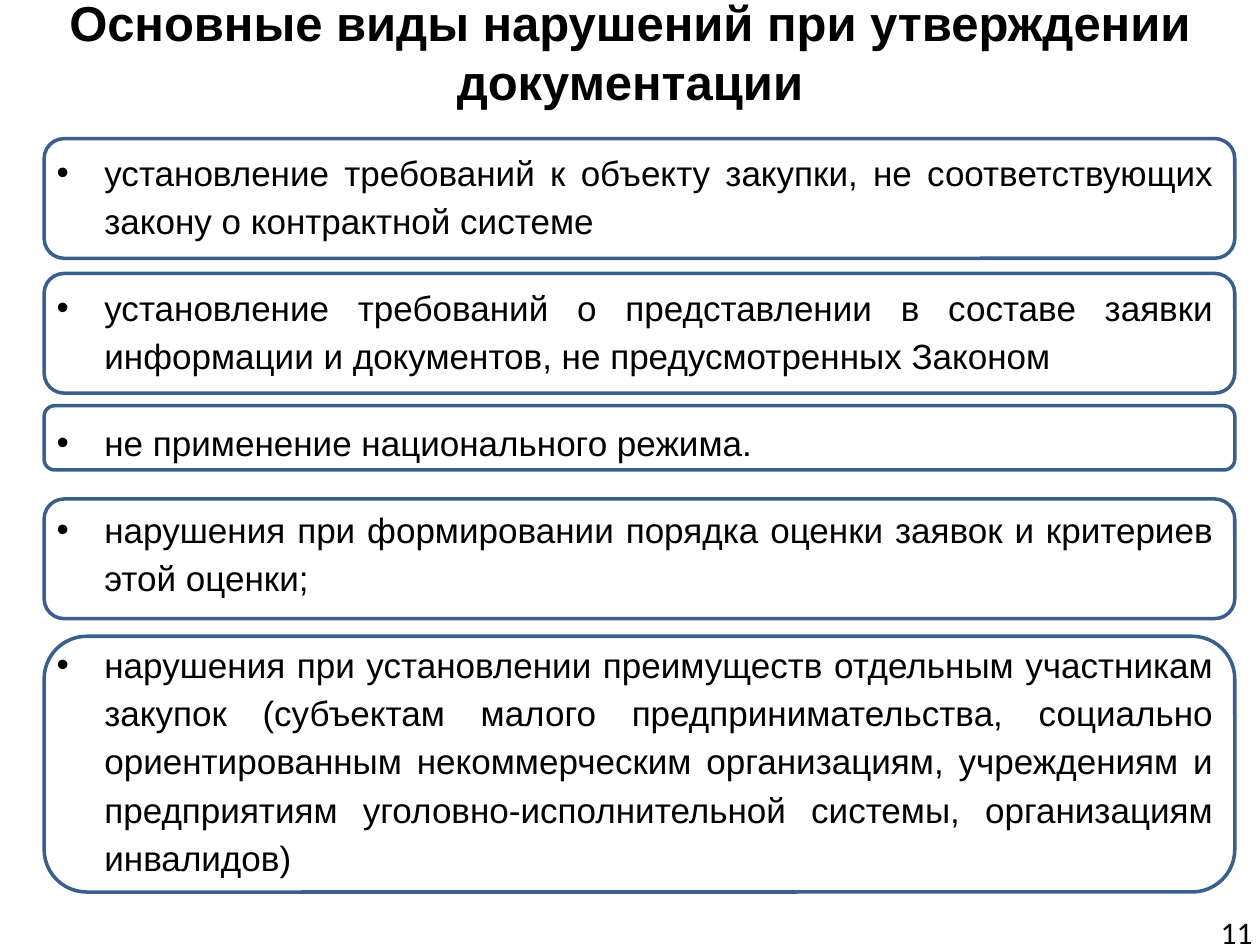
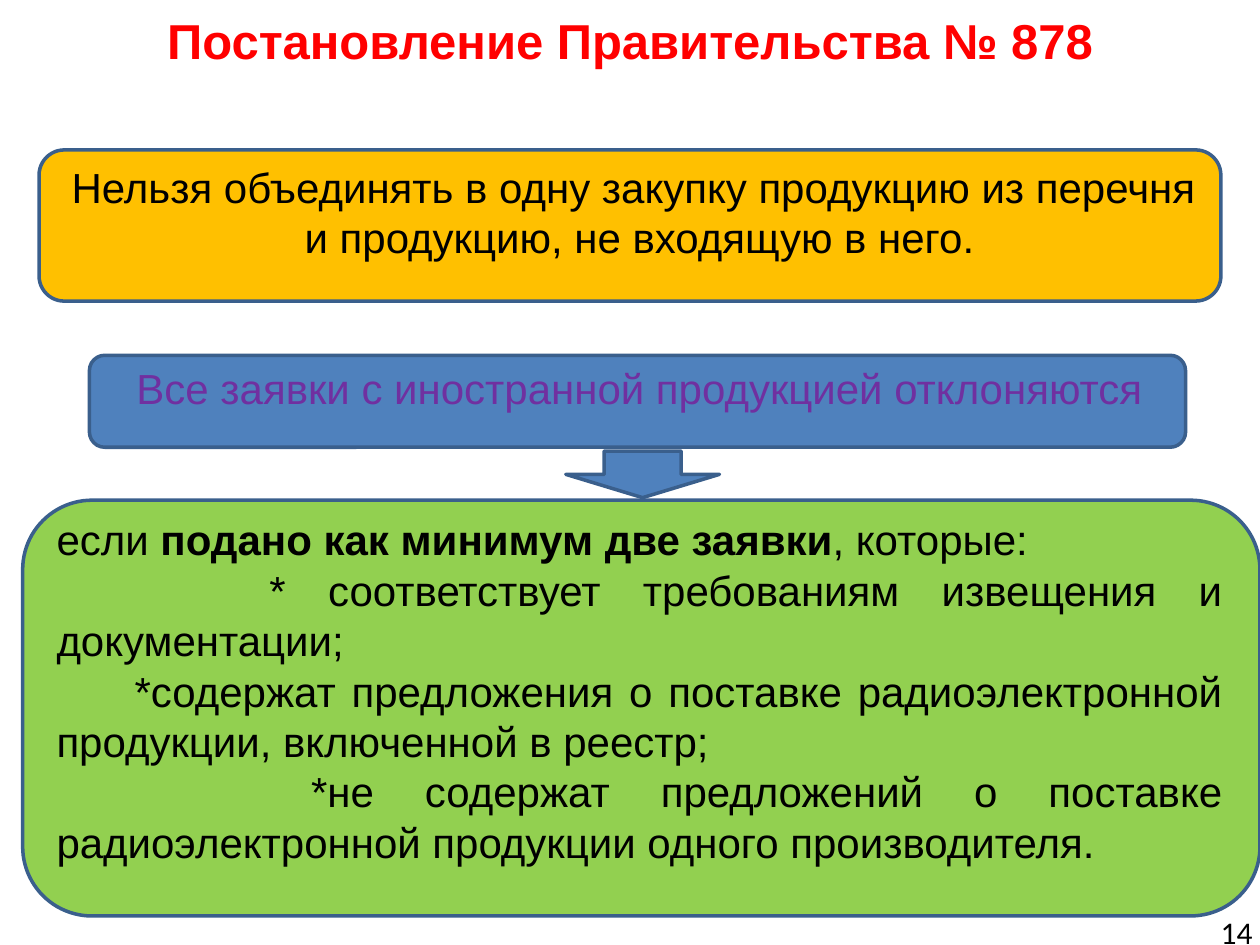
"""Build two slides on procurement documentation violations and Resolution No. 878."""

from dataclasses import dataclass

from lxml.etree import SubElement
from pptx import Presentation
from pptx.dml.color import RGBColor
from pptx.enum.shapes import MSO_SHAPE
from pptx.enum.text import MSO_ANCHOR, MSO_AUTO_SIZE, PP_ALIGN
from pptx.oxml.ns import qn
from pptx.util import Inches, Pt


@dataclass(frozen=True)
class Theme:
    black: str = "000000"
    red: str = "FF0000"
    purple: str = "7030A0"
    outline: str = "3A5F8C"
    amber: str = "FFC000"
    blue: str = "4F81BD"
    green: str = "92D050"
    text_font: str = "Arial"
    number_font: str = "Calibri"
    title_size: int = 28
    list_size: int = 20
    body_size: int = 24
    number_size: int = 18
    line_width: int = 2


def set_attributes(target, values):
    for name, value in values.items():
        setattr(target, name, value)


class SlideBuilder:
    def __init__(self, presentation, theme):
        self.presentation = presentation
        self.theme = theme
        self.slide = None

    def start_slide(self, title, number, title_top, title_color):
        self.slide = self.presentation.slides.add_slide(self.presentation.slide_layouts[5])
        shape = self.slide.shapes.title
        set_attributes(shape, {
            "left": Inches(0), "top": Inches(title_top),
            "width": Inches(10), "height": Inches(0.69),
        })
        self.format_frame(shape.text_frame)
        self.fill_paragraph(shape.text_frame.paragraphs[0], [(title, True)],
                            self.theme.title_size, title_color, PP_ALIGN.CENTER)
        frame = self.text_box(7.71, 7.2, 2.33, 0.33)
        self.fill_paragraph(frame.paragraphs[0], [(number, False)], self.theme.number_size,
                            self.theme.black, PP_ALIGN.RIGHT, self.theme.number_font)

    def format_frame(self, frame):
        set_attributes(frame, {
            "word_wrap": True,
            "auto_size": MSO_AUTO_SIZE.NONE,
            "vertical_anchor": MSO_ANCHOR.TOP,
        })

    def text_box(self, left, top, width, height):
        shape = self.slide.shapes.add_textbox(
            Inches(left), Inches(top), Inches(width), Inches(height))
        self.format_frame(shape.text_frame)
        return shape.text_frame

    def fill_paragraph(self, paragraph, runs, size, color, alignment, font_name=None):
        paragraph.alignment = alignment
        for text, bold in runs:
            run = paragraph.add_run()
            run.text = text
            set_attributes(run.font, {
                "name": font_name or self.theme.text_font,
                "size": Pt(size), "bold": bold,
            })
            run.font.color.rgb = RGBColor.from_string(color)

    def block(self, geometry, left, top, width, height, fill=None):
        shape = self.slide.shapes.add_shape(
            geometry, Inches(left), Inches(top), Inches(width), Inches(height))
        shape.shadow.inherit = False
        if fill:
            shape.fill.solid()
            shape.fill.fore_color.rgb = RGBColor.from_string(fill)
        else:
            shape.fill.background()
        shape.line.color.rgb = RGBColor.from_string(self.theme.outline)
        shape.line.width = Pt(self.theme.line_width)

    def next_paragraph(self, frame, position):
        return frame.add_paragraph() if position else frame.paragraphs[0]

    def bullet_list(self, frame, items, gap):
        for position, item in enumerate(items):
            paragraph = self.next_paragraph(frame, position)
            properties = paragraph._p.get_or_add_pPr()
            properties.set("marL", str(Inches(0.38)))
            properties.set("indent", str(Inches(-0.38)))
            SubElement(properties, qn("a:buFont")).set("typeface", self.theme.text_font)
            SubElement(properties, qn("a:buChar")).set("char", "•")
            set_attributes(paragraph, {
                "line_spacing": 1.15,
                "space_before": Pt(gap if position else 0),
            })
            self.fill_paragraph(paragraph, [(item, False)], self.theme.list_size,
                                self.theme.black, PP_ALIGN.JUSTIFY)

    def text_flow(self, frame, lines):
        for position, (runs, color, alignment, gap, indent) in enumerate(lines):
            paragraph = self.next_paragraph(frame, position)
            paragraph._p.get_or_add_pPr().set("indent", str(Inches(indent)))
            paragraph.space_before = Pt(gap)
            self.fill_paragraph(paragraph, runs, self.theme.body_size, color, alignment)


def build_violations(builder):
    builder.start_slide("Основные виды нарушений при утверждении документации",
                        "11", -0.11, builder.theme.black)
    violations = [
        "установление требований к объекту закупки, не соответствующих закону о контрактной системе",
        "установление требований о представлении в составе заявки информации и документов, "
        "не предусмотренных Законом",
        "не применение национального режима.",
        "нарушения при формировании порядка оценки заявок и критериев этой оценки;",
        "нарушения при установлении преимуществ отдельным участникам закупок (субъектам малого "
        "предпринимательства, социально ориентированным некоммерческим организациям, учреждениям "
        "и предприятиям уголовно-исполнительной системы, организациям инвалидов)",
    ]
    frames = [(1.1, 0.95), (2.17, 0.95), (3.22, 0.51), (3.96, 0.95), (5.05, 2.03)]
    for top, height in frames:
        builder.block(MSO_SHAPE.ROUNDED_RECTANGLE, 0.35, top, 9.45, height)
    builder.bullet_list(builder.text_box(0.35, 1.1, 9.38, 6), violations, 22)


def build_resolution(builder):
    theme = builder.theme
    builder.start_slide("Постановление Правительства № 878", "14", 0.03, theme.red)
    rounded = MSO_SHAPE.ROUNDED_RECTANGLE
    builder.block(rounded, 0.31, 1.19, 9.38, 1.2, theme.amber)
    builder.block(rounded, 0.71, 2.82, 8.7, 0.73, theme.blue)
    builder.block(rounded, 0.18, 3.97, 9.82, 3.3, theme.green)
    builder.block(MSO_SHAPE.DOWN_ARROW, 4.49, 3.58, 1.22, 0.37, theme.blue)

    center, justify = PP_ALIGN.CENTER, PP_ALIGN.JUSTIFY
    block_gap = 57.6
    lines = [
        ([("Нельзя объединять в одну закупку продукцию из перечня ", False)],
         theme.black, center, 0, 0),
        ([("и продукцию, не входящую в него.", False)], theme.black, center, 0, 0),
        ([("Все заявки с иностранной продукцией отклоняются", False)],
         theme.purple, center, block_gap, 0),
        ([("если ", False), ("подано как минимум две заявки", True), (", которые:", False)],
         theme.black, justify, block_gap, 0),
    ]
    conditions = [
        ("* соответствует требованиям извещения и документации;", 1.69),
        ("*содержат предложения о поставке радиоэлектронной продукции, включенной в реестр;", 0.62),
        ("*не содержат предложений о поставке радиоэлектронной продукции одного производителя.", 2.02),
    ]
    lines += [([(text, False)], theme.black, justify, 0, indent) for text, indent in conditions]
    builder.text_flow(builder.text_box(0.35, 1.23, 9.45, 5.9), lines)


def main():
    presentation = Presentation()
    set_attributes(presentation, {"slide_width": Inches(10), "slide_height": Inches(7.5)})
    builder = SlideBuilder(presentation, Theme())
    build_violations(builder)
    build_resolution(builder)
    presentation.save("out.pptx")


if __name__ == "__main__":
    main()
